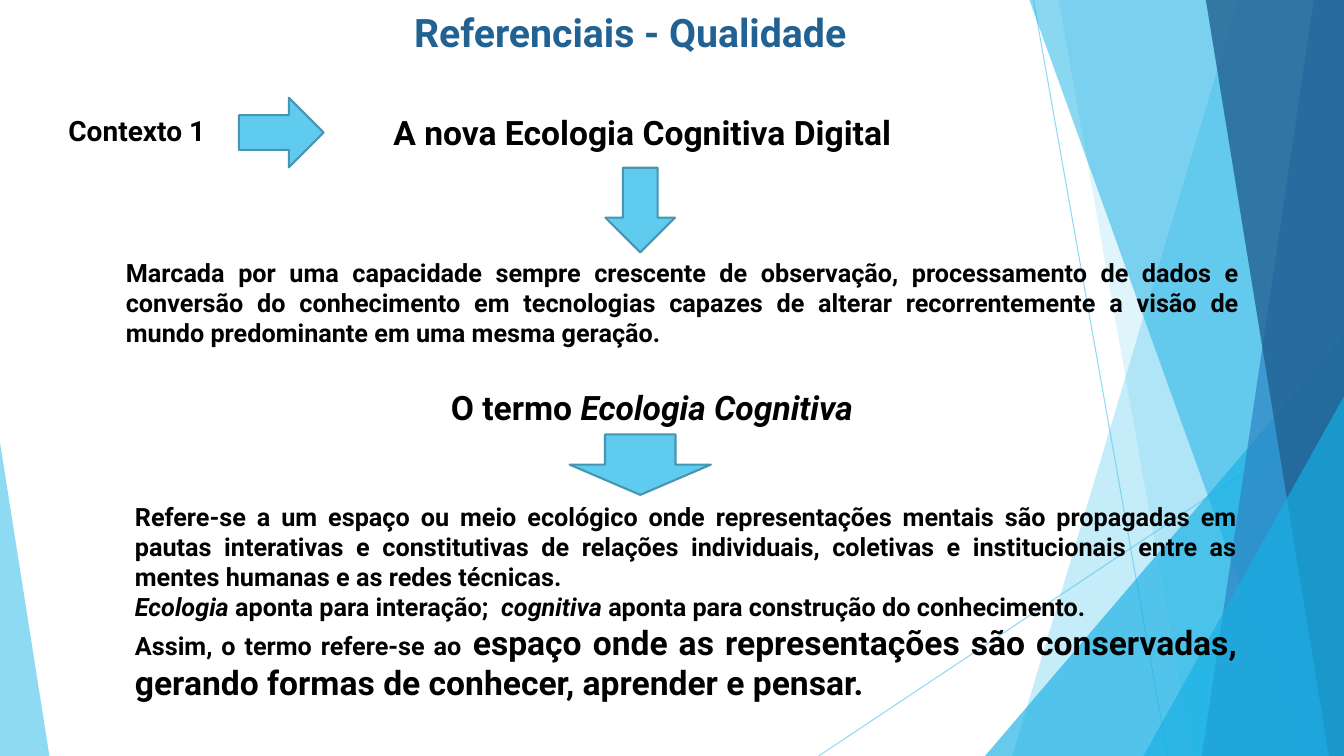
from lxml import etree
from pptx import Presentation
from pptx.dml.color import RGBColor
from pptx.enum.shapes import MSO_CONNECTOR, MSO_SHAPE
from pptx.enum.text import MSO_ANCHOR, MSO_AUTO_SIZE, PP_ALIGN
from pptx.oxml.ns import qn
from pptx.util import Inches, Pt

LEFT, CENTER, JUSTIFY = PP_ALIGN.LEFT, PP_ALIGN.CENTER, PP_ALIGN.JUSTIFY
TOP = MSO_ANCHOR.TOP
NO_FIT, GROW = MSO_AUTO_SIZE.NONE, MSO_AUTO_SIZE.SHAPE_TO_FIT_TEXT
STRAIGHT = MSO_CONNECTOR.STRAIGHT
TRIANGLE, RIGHT_ARROW = MSO_SHAPE.RIGHT_TRIANGLE, MSO_SHAPE.RIGHT_ARROW
SLANTED = MSO_SHAPE.ISOSCELES_TRIANGLE

SKY = RGBColor(0x5F, 0xCB, 0xEF)
CYAN = RGBColor(0x17, 0xB0, 0xE4)
BLUE = RGBColor(0x2E, 0x83, 0xC3)
NAVY = RGBColor(0x22, 0x62, 0x92)
ARROW_EDGE = RGBColor(0x46, 0x96, 0xB1)
BLACK = RGBColor(0, 0, 0)
FONT = "Roboto"
WIDTH, HEIGHT = 13.33, 7.5


def set_opacity(shape, percent):
    color = shape.element.spPr.find(".//" + qn("a:srgbClr"))
    etree.SubElement(color, qn("a:alpha"), val=str(percent * 1000))


def style_font(font, size, color):
    font.name = FONT
    font.size = Pt(size)
    font.bold = True
    font.color.rgb = color


deck = Presentation()
deck.slide_width, deck.slide_height = Inches(WIDTH), Inches(HEIGHT)
page = deck.slides.add_slide(deck.slide_layouts[5])
shapes = page.shapes

for x1, y1, x2, y2 in [(10.25, 0, 11.58, HEIGHT), (WIDTH, 4.03, 8.12, HEIGHT)]:
    ray = shapes.add_connector(STRAIGHT, Inches(x1), Inches(y1), Inches(x2), Inches(y2))
    ray.line.color.rgb = SKY
    ray.line.width = Pt(0.75)
    set_opacity(ray, 70)
    etree.SubElement(ray.element.spPr, qn("a:effectLst"))

bands = [
    ("band", 12.28, 10.04, SKY, 36),
    ("band", 10.5, 11.83, SKY, 20),
    ("triangle", 9.77, 3.33, 3.56, 1, CYAN, 66),
    ("band", 10.21, 12.91, CYAN, 50),
    ("band", 13.03, 11.92, BLUE, 70),
    ("band", 11.96, 13.18, NAVY, 80),
    ("triangle", 11.34, 3.93, 1.99, 1, CYAN, 66),
    ("triangle", 0, 4.39, 0.49, 0, SKY, 70),
]
for kind, *geometry, color, opacity in bands:
    if kind == "band":
        top_x, bottom_x = geometry
        outline = shapes.build_freeform(Inches(top_x), 0)
        outline.add_line_segments([
            (Inches(WIDTH), 0),
            (Inches(WIDTH), Inches(HEIGHT)),
            (Inches(bottom_x), Inches(HEIGHT)),
        ])
        facet = outline.convert_to_shape()
    else:
        left, top, width, apex = geometry
        facet = shapes.add_shape(
            SLANTED, Inches(left), Inches(top), Inches(width), Inches(HEIGHT - top))
        facet.adjustments[0] = apex
    facet.shadow.inherit = False
    facet.fill.solid()
    facet.fill.fore_color.rgb = color
    facet.line.fill.background()
    set_opacity(facet, opacity)

title = shapes.title
title.element.getparent().append(title.element)
title.left, title.top = Inches(1.55), Inches(0.03)
title.width, title.height = Inches(9.4), Inches(0.74)
title.text_frame.text = "Referenciais - Qualidade"
title.text_frame.vertical_anchor = TOP
title.text_frame.auto_size = NO_FIT
heading = title.text_frame.paragraphs[0]
heading.alignment = CENTER
style_font(heading.font, 28, NAVY)

for left, top, width, height, rotation in [
    (5.93, 1.74, 0.84, 0.69, 90),
    (6.05, 3.91, 0.6, 1.4, 90),
    (2.37, 0.97, 0.84, 0.69, 0),
]:
    arrow = shapes.add_shape(
        RIGHT_ARROW, Inches(left), Inches(top), Inches(width), Inches(height))
    arrow.rotation = rotation
    arrow.shadow.inherit = False
    arrow.fill.solid()
    arrow.fill.fore_color.rgb = SKY
    arrow.line.color.rgb = ARROW_EDGE
    arrow.line.width = Pt(1.5)

PLAIN, ITALIC, LARGE = "plain", "italic", "large"
texts = [
    (0.58, 1.08, 1.78, 0.44, 20, LEFT, [[("Contexto 1", PLAIN)]]),
    (3.69, 1.06, 5.36, 0.5, 24, CENTER, [[("A nova Ecologia Cognitiva Digital", PLAIN)]]),
    (4.16, 3.79, 4.61, 0.5, 24, CENTER,
     [[("O termo ", PLAIN), ("Ecologia Cognitiva", ITALIC)]]),
    (1.15, 2.5, 11.24, 1.31, 18, JUSTIFY, [[
        ("Marcada por uma capacidade sempre crescente de observação, processamento de "
         "dados e conversão do conhecimento em tecnologias capazes de alterar "
         "recorrentemente a visão de mundo predominante em uma mesma geração.", PLAIN)]]),
    (1.24, 4.92, 11.13, 2.12, 18, JUSTIFY, [
        [("Refere-se a um espaço ou meio ecológico onde representações mentais são "
          "propagadas em pautas interativas e constitutivas de relações individuais, "
          "coletivas e institucionais entre as mentes humanas e as redes técnicas.", PLAIN)],
        [("Ecologia ", ITALIC), ("aponta para interação;  ", PLAIN), ("cognitiva", ITALIC),
         (" aponta para construção do conhecimento.", PLAIN)],
        [("Assim, o termo refere-se ao", PLAIN),
         (" espaço onde as representações são conservadas, gerando formas de conhecer, "
          "aprender e pensar.", LARGE)],
    ]),
]
for left, top, width, height, size, alignment, paragraphs in texts:
    box = shapes.add_textbox(Inches(left), Inches(top), Inches(width), Inches(height))
    frame = box.text_frame
    frame.word_wrap = True
    frame.auto_size = GROW
    for index, spans in enumerate(paragraphs):
        para = frame.add_paragraph() if index else frame.paragraphs[0]
        para.alignment = alignment
        style_font(para.font, size, BLACK)
        for words, style in spans:
            span = para.add_run()
            span.text = words
            if style == ITALIC:
                span.font.italic = True
            elif style == LARGE:
                span.font.size = Pt(24)

deck.save("out.pptx")
